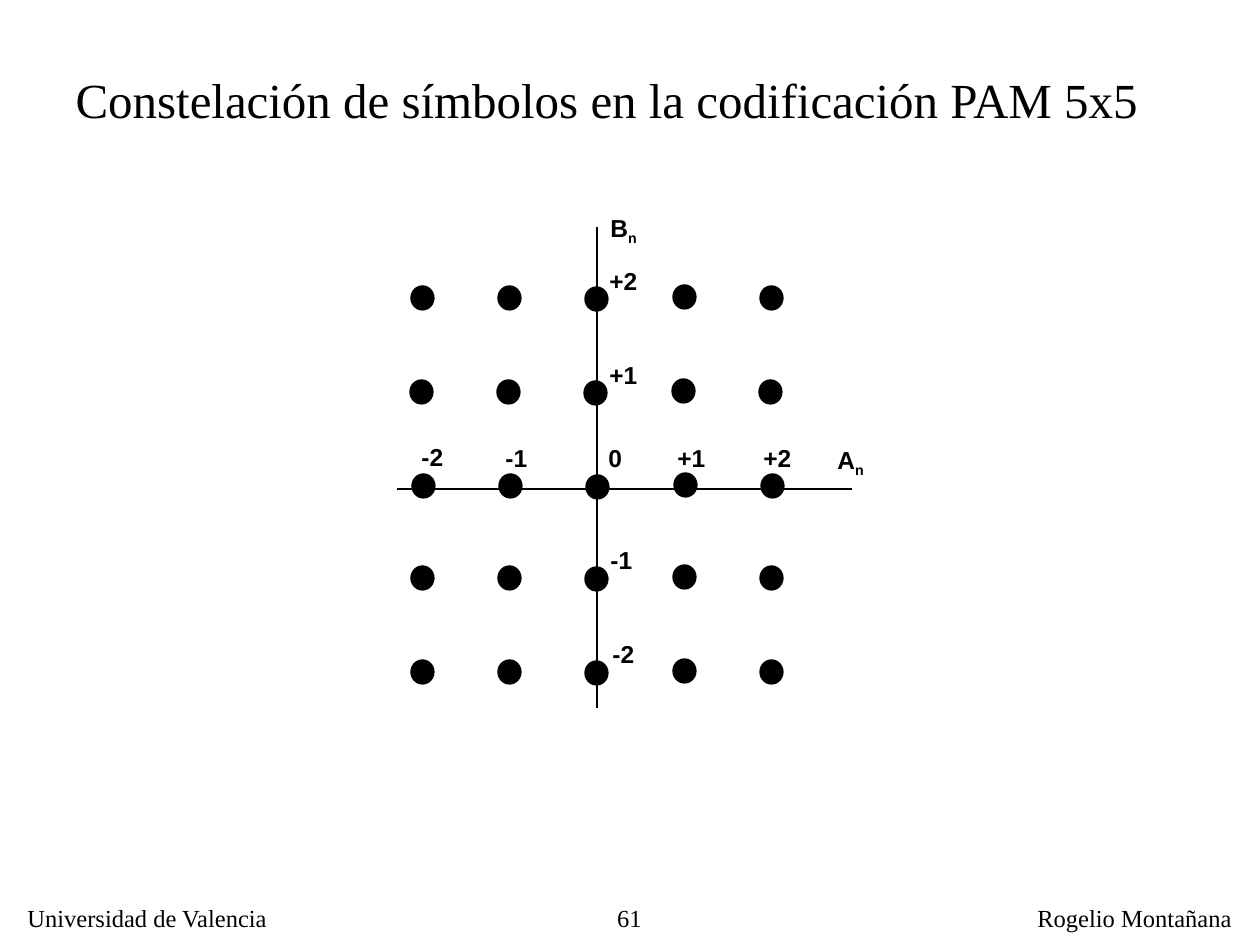
from typing import NamedTuple

from lxml import etree
from pptx import Presentation
from pptx import util as u
from pptx.dml.color import RGBColor
from pptx.enum import shapes, text
from pptx.oxml.ns import qn

SCALE = 914400 / 126  # EMU per px
BLACK = "000000"
SERIF, SANS = "Times New Roman", "Arial"


class Label(NamedTuple):
    words: str
    x: int
    y: int
    w: int
    sub: str = ""


class Axis(NamedTuple):
    x1: int
    y1: int
    x2: int
    y2: int


def px(n: int) -> u.Emu:
    return u.Emu(round(n * SCALE))


def color(code: str) -> RGBColor:
    return RGBColor.from_string(code)


def style(run, size: int, face: str, bold: bool = False) -> None:
    run.font.size = u.Pt(size)
    run.font.name = face
    run.font.bold = bold
    run.font.color.rgb = color(BLACK)


def fill_text(box, words: str, size: int, face: str, bold: bool = False,
              align=text.PP_ALIGN.LEFT, wrap: bool = False):
    frame = box.text_frame
    frame.text = words
    frame.word_wrap = wrap
    if not wrap:
        frame.auto_size = text.MSO_AUTO_SIZE.SHAPE_TO_FIT_TEXT
    frame.vertical_anchor = text.MSO_ANCHOR.TOP
    para = frame.paragraphs[0]
    para.alignment = align
    style(para.runs[0], size, face, bold)
    return para


def add_box(slide, x: int, y: int, w: int, h: int):
    return slide.shapes.add_textbox(px(x), px(y), px(w), px(h))


def add_label(slide, label: Label) -> None:
    box = add_box(slide, label.x, label.y, label.w, 42)
    para = fill_text(box, label.words, 14, SANS, True)
    if label.sub:
        run = para.add_run()
        run.text = label.sub
        style(run, 14, SANS, True)
        run._r.get_or_add_rPr().set("baseline", "-25000")


def add_axis(slide, axis: Axis) -> None:
    line = slide.shapes.add_connector(
        shapes.MSO_CONNECTOR.STRAIGHT, *(px(n) for n in axis))
    line.line.color.rgb = color(BLACK)
    line.line.width = u.Pt(0.75)
    etree.SubElement(line._element.spPr, qn("a:effectLst"))


def add_dot(slide, x: int, y: int) -> None:
    dot = slide.shapes.add_shape(
        shapes.MSO_SHAPE.OVAL, px(x), px(y), px(23), px(24))
    dot.shadow.inherit = False
    dot.fill.solid()
    dot.fill.fore_color.rgb = color(BLACK)
    dot.line.color.rgb = color(BLACK)
    dot.line.width = u.Pt(0.75)


AXES = [Axis(397, 489, 852, 489), Axis(597, 227, 597, 708)]

# Each column has a left and a small drop, each row a top and a small shift
COLS = [(411, 0), (498, 0), (585, 1), (673, -1), (760, 0)]
ROWS = [(286, 0), (380, -1), (474, 1), (566, 0), (660, 0)]

LABELS = [
    Label("-2", 409, 436, 47), Label("-1", 493, 437, 47),
    Label("0", 596, 437, 39),
    Label("+1", 665, 437, 53), Label("+2", 751, 437, 53),
    Label("+2", 597, 260, 53), Label("+1", 597, 354, 53),
    Label("-1", 598, 539, 47), Label("-2", 600, 633, 47),
    Label("A", 825, 439, 53, "n"), Label("B", 598, 207, 53, "n"),
]


def main() -> None:
    deck = Presentation()
    deck.slide_width, deck.slide_height = px(1260), px(945)
    slide = deck.slides.add_slide(deck.slide_layouts[5])

    # Title
    title = slide.shapes.title
    title.left, title.top, title.width, title.height = map(
        px, (63, 63, 1092, 72))
    fill_text(title, "Constelación de símbolos en la codificación PAM 5x5",
              28, SERIF)

    # Footer
    fill_text(add_box(slide, 520, 897, 134, 39), "61", 14, SERIF,
              align=text.PP_ALIGN.RIGHT, wrap=True)
    for words, x, w in [("Universidad de Valencia", 15, 268),
                        ("Rogelio Montañana", 1025, 224)]:
        fill_text(add_box(slide, x, 897, w, 42), words, 14, SERIF)

    # Constellation
    for axis in AXES:
        add_axis(slide, axis)
    for left, drop in COLS:
        for top, shift in ROWS:
            add_dot(slide, left + shift, top + drop)
    for label in LABELS:
        add_label(slide, label)

    deck.save("out.pptx")


if __name__ == "__main__":
    main()
